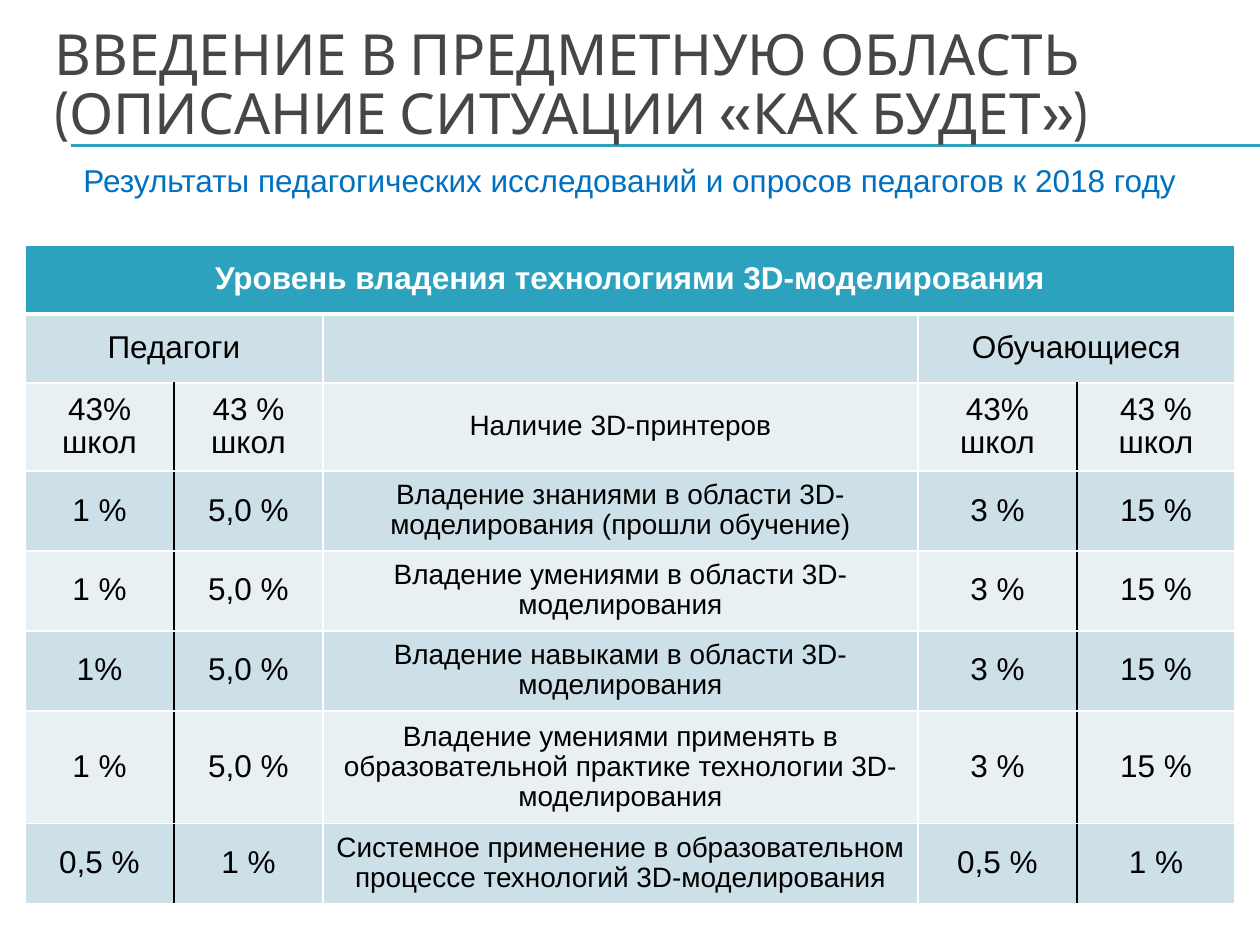
"""Build the slide with survey results on 3D modelling skills."""
from lxml import etree
from pptx import Presentation
from pptx.dml.color import RGBColor
from pptx.enum.shapes import MSO_CONNECTOR
from pptx.enum.text import MSO_ANCHOR, PP_ALIGN
from pptx.oxml.ns import qn
from pptx.util import Emu, Pt

LINE = MSO_CONNECTOR.STRAIGHT
MID, TOP = MSO_ANCHOR.MIDDLE, MSO_ANCHOR.TOP
LEFT, MIDDLE = PP_ALIGN.LEFT, PP_ALIGN.CENTER
SCALE = 914400 / 126
HEX = {
    "teal": "2DA2BF", "grey": "464646", "blue": "0070C0", "white": "FFFFFF",
    "black": "000000", "band": "CDE0E8", "pale": "E8F0F4",
}
SIDES = ("L", "R", "T", "B")
COLS = (149, 149, 595, 159, 158)
HIGH = (69, 69, 88, 80, 80, 80, 113, 80)
HEAD = "Уровень владения технологиями 3D-моделирования"
ROWS = (
    (HEAD, "", "", "", ""),
    ("Педагоги", "", "", "Обучающиеся", ""),
    ("43% школ", "43 % школ", "Наличие 3D-принтеров", "43% школ", "43 % школ"),
    ("1 %", "5,0 %", "Владение знаниями в области 3D-моделирования (прошли обучение)",
     "3 %", "15 %"),
    ("1 %", "5,0 %", "Владение умениями в области 3D-моделирования", "3 %", "15 %"),
    ("1%", "5,0 %", "Владение навыками в области 3D-моделирования", "3 %", "15 %"),
    ("1 %", "5,0 %", "Владение умениями применять в образовательной практике "
     "технологии 3D-моделирования", "3 %", "15 %"),
    ("0,5 %", "1 %", "Системное применение в образовательном процессе "
     "технологий 3D-моделирования", "0,5 %", "1 %"),
)
SPANS = ((0, 0, 4), (1, 0, 1), (1, 3, 4))


def px(num):
    return Emu(round(num * SCALE))


def tint(name):
    return RGBColor.from_string(HEX[name])


class Deck:
    def __init__(self, wide, high):
        self.show = Presentation()
        self.show.slide_width, self.show.slide_height = px(wide), px(high)
        self.page = self.show.slides.add_slide(self.show.slide_layouts[6])

    def words(self, frame, lines, size, color, font="Arial", bold=False,
              align=MIDDLE, pitch=1.0):
        para = frame.paragraphs[0]
        para.alignment, para.line_spacing = align, pitch
        for num, line in enumerate(lines):
            if num:
                para.add_line_break()
            run = para.add_run()
            run.text = line
            run.font.name, run.font.size, run.font.bold = font, Pt(size), bold
            run.font.color.rgb = tint(color)

    def text(self, box, lines, size, color, anchor=TOP, foot=6, **style):
        frame = self.page.shapes.add_textbox(*map(px, box)).text_frame
        frame.word_wrap, frame.vertical_anchor = True, anchor
        frame.margin_bottom = px(foot)
        self.words(frame, lines, size, color, **style)

    def rule(self, left, right, top):
        line = self.page.shapes.add_connector(
            LINE, px(left), px(top), px(right), px(top))
        line.line.color.rgb, line.line.width = tint("teal"), Pt(0.75)
        etree.SubElement(line._element.spPr, qn("a:effectLst"))

    def edge(self, cell, side, color, width):
        prop = cell._tc.get_or_add_tcPr()
        line = etree.SubElement(prop, qn("a:ln" + side), w=str(Pt(width)))
        fill = etree.SubElement(line, qn("a:solidFill"))
        etree.SubElement(fill, qn("a:srgbClr"), val=HEX[color])

    def cell(self, cell, row, col, label):
        dark = {0: "R", 1: "L", 3: "R", 4: "L"}.get(col) if row > 1 else None
        thick = {0: "B", 1: "T"}.get(row)
        for side in SIDES:
            self.edge(cell, side, "black" if side == dark else "white",
                      3 if side == thick else 1)
        cell.fill.solid()
        cell.fill.fore_color.rgb = tint(
            "teal" if row == 0 else "band" if row % 2 else "pale")
        cell.vertical_anchor = MID
        if label:
            self.words(cell.text_frame, [label], 16 if col == 2 else 18,
                       "white" if row == 0 else "black", bold=row == 0, pitch=0.96)

    def table(self, left, top):
        grid = self.page.shapes.add_table(
            len(ROWS), len(COLS), px(left), px(top), px(sum(COLS)), px(sum(HIGH))).table
        for col, wide in zip(grid.columns, COLS):
            col.width = px(wide)
        for row, high in zip(grid.rows, HIGH):
            row.height = px(high)
        for row, first, last in SPANS:
            grid.cell(row, first).merge(grid.cell(row, last))
        for row, line in enumerate(ROWS):
            for col, label in enumerate(line):
                self.cell(grid.cell(row, col), row, col, label)


def main():
    deck = Deck(1260, 945)
    for top in (145, 146):
        deck.rule(71, 1260, top)
    deck.text((42, 63, 1197, 116),
              ("ВВЕДЕНИЕ В ПРЕДМЕТНУЮ ОБЛАСТЬ", "(ОПИСАНИЕ СИТУАЦИИ «КАК БУДЕТ»)"),
              32.4, "grey", anchor=MID, foot=74, font="Cabin", align=LEFT, pitch=0.88)
    deck.text((25, 155, 1210, 51),
              ["Результаты педагогических исследований и опросов педагогов к 2018 году"],
              18, "blue")
    deck.table(25, 245)
    deck.show.save("out.pptx")


if __name__ == "__main__":
    main()
